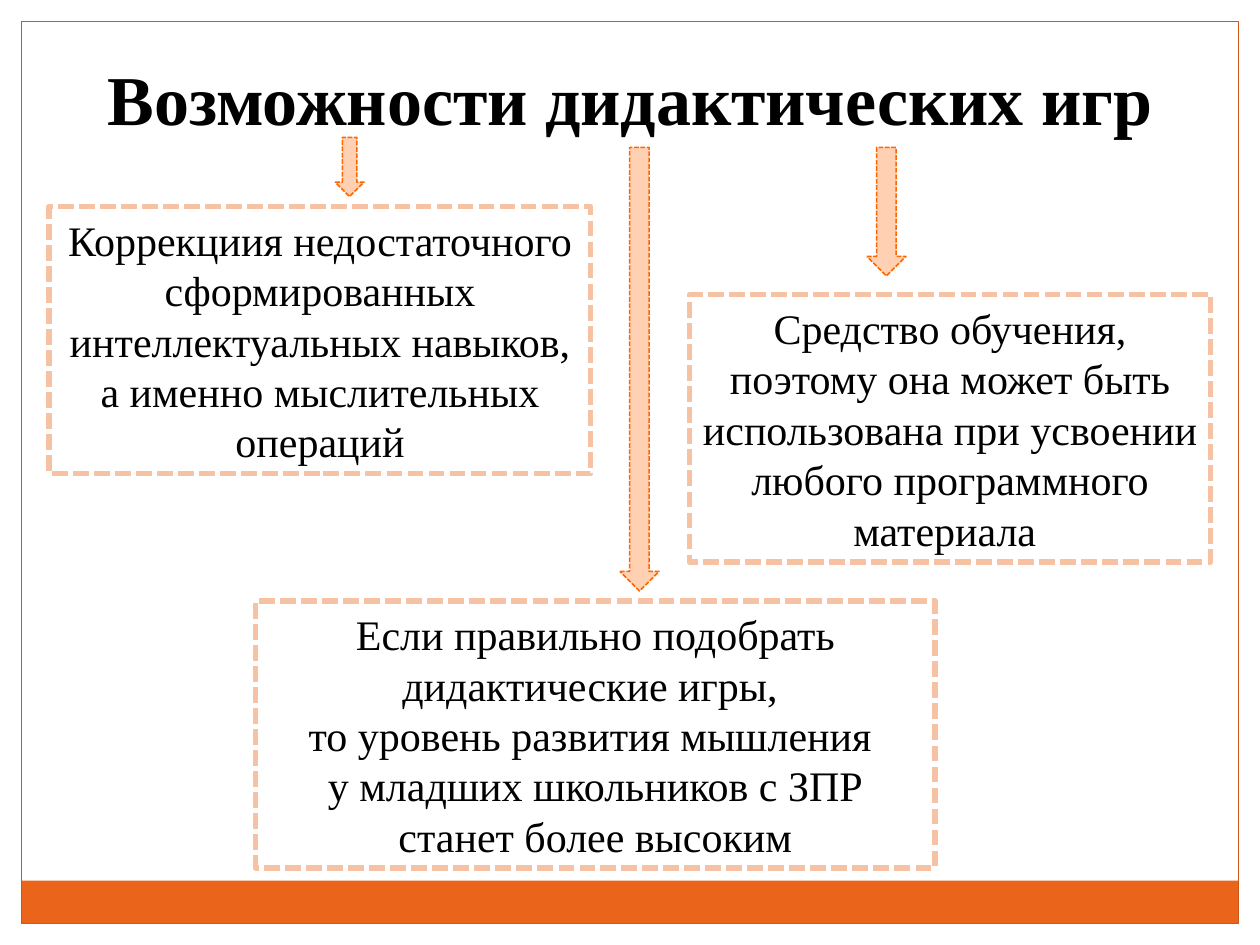
from dataclasses import dataclass

import pptx
import pptx.dml.color
import pptx.enum.dml
import pptx.enum.shapes
import pptx.enum.text
import pptx.oxml
import pptx.oxml.ns
import pptx.util

Inches = pptx.util.Inches
Pt = pptx.util.Pt
SHAPE = pptx.enum.shapes.MSO_SHAPE


@dataclass(frozen=True)
class Theme:
    """Colours, font and type sizes of the slide."""

    paper: str = "FFFFFF"
    ink: str = "000000"
    band: str = "EB641B"
    frame: str = "CF5818"
    border: str = "F7C1A4"
    arrow: str = "FF6600"
    arrow_alpha: int = 30
    font: str = "Times New Roman"
    title: int = 40
    body: int = 24


THEME = Theme()


def rgb(value):
    """Return a colour object for a hex string."""
    return pptx.dml.color.RGBColor.from_string(value)


def apply_format(obj, values):
    """Set each named attribute on an object."""
    for name, value in values.items():
        setattr(obj, name, value)


def add_shape(slide, kind, box, fill=None, line=None, width=0.75, dashed=False):
    """Add a preset shape in a box given in inches."""
    sp = slide.shapes.add_shape(kind, *map(Inches, box))
    sp.shadow.inherit = False
    if fill:
        sp.fill.solid()
        sp.fill.fore_color.rgb = rgb(fill)
    else:
        sp.fill.background()
    if line:
        sp.line.color.rgb = rgb(line)
        sp.line.width = Pt(width)
        if dashed:
            sp.line.dash_style = pptx.enum.dml.MSO_LINE.SQUARE_DOT
            dash = sp.line._get_or_add_ln().find(pptx.oxml.ns.qn("a:prstDash"))
            dash.set("val", "sysDash")
    else:
        sp.line.fill.background()
    return sp


def write_text(sp, paragraphs, size, bold=False):
    """Fill a shape with centred paragraphs."""
    tf = sp.text_frame
    apply_format(tf, {
        "word_wrap": True,
        "vertical_anchor": pptx.enum.text.MSO_ANCHOR.MIDDLE,
    })
    for i, text in enumerate(paragraphs):
        p = tf.add_paragraph() if i else tf.paragraphs[0]
        p.alignment = pptx.enum.text.PP_ALIGN.CENTER
        r = p.add_run()
        r.text = text
        apply_format(r.font, {"name": THEME.font, "size": Pt(size), "bold": bold})
        r.font.color.rgb = rgb(THEME.ink)


def add_frame(slide, box):
    """Draw the page frame with its band along the bottom."""
    left, top, width, height = box
    band = 0.34
    add_shape(slide, SHAPE.RECTANGLE,
              (left, top + height - band, width, band), fill=THEME.band)
    add_shape(slide, SHAPE.RECTANGLE, box, line=THEME.frame)


def add_title(slide, box, text):
    """Place the slide title."""
    sp = slide.shapes.add_textbox(*map(Inches, box))
    write_text(sp, [text], THEME.title, bold=True)


def add_card(slide, box, paragraphs):
    """Place a dashed card with its text."""
    sp = add_shape(slide, SHAPE.RECTANGLE, box,
                   line=THEME.border, width=3, dashed=True)
    write_text(sp, paragraphs, THEME.body)


def add_arrow(slide, box):
    """Place a translucent arrow that points down."""
    sp = add_shape(slide, SHAPE.DOWN_ARROW, box, fill=THEME.arrow,
                   line=THEME.arrow, width=0.9, dashed=True)
    color = sp.fill._xPr.find(
        f"{pptx.oxml.ns.qn('a:solidFill')}/{pptx.oxml.ns.qn('a:srgbClr')}")
    color.append(pptx.oxml.parse_xml(
        f'<a:alpha {pptx.oxml.ns.nsdecls("a")} val="{THEME.arrow_alpha * 1000}"/>'))


CARDS = [
    ((0.39, 1.64, 4.3, 2.12), (2.66, 1.09, 0.23, 0.47), [
        "Коррекциия недостаточного сформированных интеллектуальных навыков, "
        "а именно мыслительных операций",
    ]),
    ((5.47, 2.34, 4.14, 2.12), (6.88, 1.17, 0.31, 1.02), [
        "Средство обучения, поэтому она может быть использована при усвоении "
        "любого программного материала ",
    ]),
    ((2.03, 4.77, 5.39, 2.12), (4.92, 1.17, 0.31, 3.52), [
        "Если правильно подобрать дидактические игры, ",
        "то уровень развития мышления ",
        "у младших школьников с ЗПР станет более высоким",
    ]),
]


def main():
    """Build the slide and save it."""
    prs = pptx.Presentation()
    apply_format(prs, {"slide_width": Inches(10), "slide_height": Inches(7.5)})
    slide = prs.slides.add_slide(prs.slide_layouts[6])
    slide.background.fill.solid()
    slide.background.fill.fore_color.rgb = rgb(THEME.paper)
    add_frame(slide, (0.17, 0.17, 9.66, 7.16))
    add_title(slide, (0, 0.39, 10, 0.77), "Возможности дидактических игр")
    for card_box, arrow_box, paragraphs in CARDS:
        add_card(slide, card_box, paragraphs)
        add_arrow(slide, arrow_box)
    prs.save("out.pptx")


if __name__ == "__main__":
    main()
